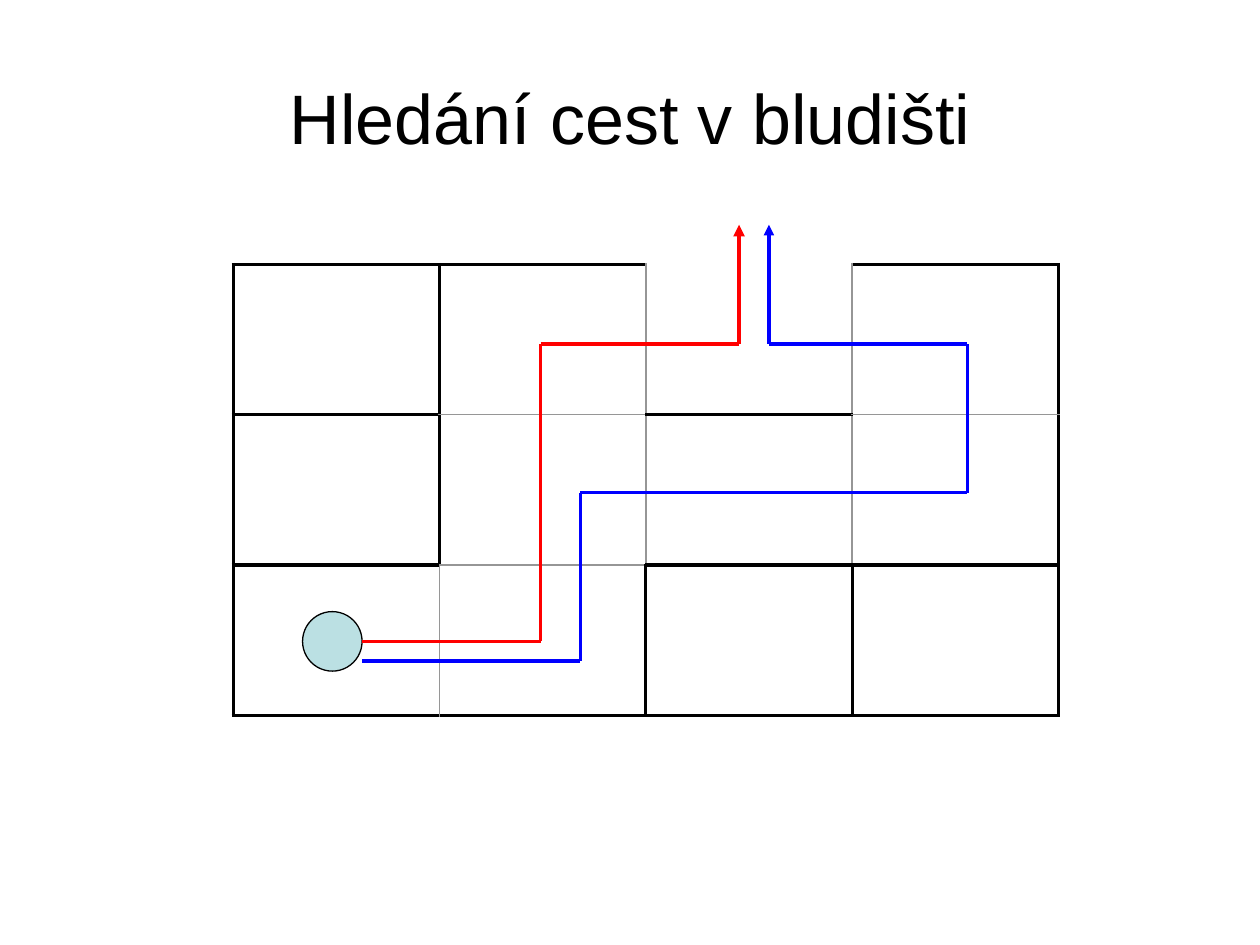
from itertools import pairwise

from lxml import etree
from pptx import Presentation
from pptx import util as u
from pptx.dml.color import RGBColor
from pptx.enum import shapes, text
from pptx.oxml import ns

COLORS = {"ink": "000000", "passage": "969696", "start": "BBE0E3",
          "red": "FF0000", "blue": "0000FF"}
COLS, ROWS = 4, 3
EXIT = {(0, 2), (-1, 2)}
# Pairs of (row, column) cells with no wall between them
PASSAGES = [{(0, 1), (0, 2)}, {(0, 2), (0, 3)}, {(0, 1), (1, 1)}, {(0, 3), (1, 3)},
            {(1, 1), (1, 2)}, {(1, 2), (1, 3)}, {(1, 1), (2, 1)}, {(2, 0), (2, 1)}]
SIDES = {"L": (0, -1), "R": (0, 1), "T": (-1, 0), "B": (1, 0)}
# Corners in cm from the top left of the maze, and the width of the final arrow
ROUTES = {
    "red": ([(2.6, 7.6), (6.2, 7.6), (6.2, 1.6), (10.2, 1.6), (10.2, -0.8)], 2.25),
    "blue": ([(2.6, 8), (7, 8), (7, 4.6), (14.8, 4.6), (14.8, 1.6), (10.8, 1.6),
              (10.8, -0.8)], 2),
}


def rgb(name):
    return RGBColor.from_string(COLORS[name])


def add_title(slide, left, top, width, height):
    box = slide.shapes.add_textbox(u.Cm(left), u.Cm(top), u.Cm(width), u.Cm(height))
    frame = box.text_frame
    frame.word_wrap = True
    frame.vertical_anchor = text.MSO_ANCHOR.MIDDLE
    heading = frame.paragraphs[0]
    heading.alignment = text.PP_ALIGN.CENTER
    run = heading.add_run()
    run.text = "Hledání cest v bludišti"
    run.font.name = "Arial"
    run.font.size = u.Pt(40)
    run.font.color.rgb = rgb("ink")


def set_border(cell, index, side, color, width):
    """Draw one side of a cell; a color of None leaves it open."""
    properties = cell._tc.get_or_add_tcPr()
    border = etree.Element(ns.qn(f"a:ln{side}"), w=str(u.Pt(width)))
    if color is None:
        etree.SubElement(border, ns.qn("a:noFill"))
    else:
        fill = etree.SubElement(border, ns.qn("a:solidFill"))
        etree.SubElement(fill, ns.qn("a:srgbClr"), val=COLORS[color])
    properties.insert(index, border)


def add_maze(slide, left, top, width, height):
    frame = slide.shapes.add_table(ROWS, COLS, u.Cm(left), u.Cm(top),
                                   u.Cm(width), u.Cm(height))
    maze = frame.table
    maze.first_row = maze.horz_banding = False
    for row in range(ROWS):
        for col in range(COLS):
            cell = maze.cell(row, col)
            cell.fill.background()
            for index, (side, (down, right)) in enumerate(SIDES.items()):
                pair = {(row, col), (row + down, col + right)}
                if pair == EXIT:
                    set_border(cell, index, side, None, 1)
                elif pair in PASSAGES:
                    set_border(cell, index, side, "passage", 1)
                else:
                    set_border(cell, index, side, "ink", 2)


def add_start(slide, left, top, size):
    start = slide.shapes.add_shape(shapes.MSO_SHAPE.OVAL, u.Cm(left), u.Cm(top),
                                   u.Cm(size), u.Cm(size))
    start.shadow.inherit = False
    start.fill.solid()
    start.fill.fore_color.rgb = rgb("start")
    start.line.color.rgb = rgb("ink")
    start.line.width = u.Pt(0.75)


def add_route(slide, left, top, color, corners, arrow_width):
    """Join the corners with straight lines and end in an arrowhead."""
    for begin, end in pairwise(corners):
        step = slide.shapes.add_connector(
            shapes.MSO_CONNECTOR.STRAIGHT,
            u.Cm(left + begin[0]), u.Cm(top + begin[1]),
            u.Cm(left + end[0]), u.Cm(top + end[1]))
        step.line.color.rgb = rgb(color)
        step.line.width = u.Pt(2)
        etree.SubElement(step._element.spPr, ns.qn("a:effectLst"))
    step.line.width = u.Pt(arrow_width)
    etree.SubElement(step.line._get_or_add_ln(), ns.qn("a:tailEnd"), type="triangle")


def main():
    deck = Presentation()
    deck.slide_width, deck.slide_height = u.Cm(25.4), u.Cm(19.05)
    slide = deck.slides.add_slide(deck.slide_layouts[6])
    left, top = 4.7, 5.33
    add_title(slide, 1.27, 0.76, 22.86, 3.18)
    add_maze(slide, left, top, 16.64, 9.09)
    add_start(slide, left + 1.4, top + 7, 1.2)
    for color, (corners, arrow_width) in ROUTES.items():
        add_route(slide, left, top, color, corners, arrow_width)
    deck.save("out.pptx")


if __name__ == "__main__":
    main()
